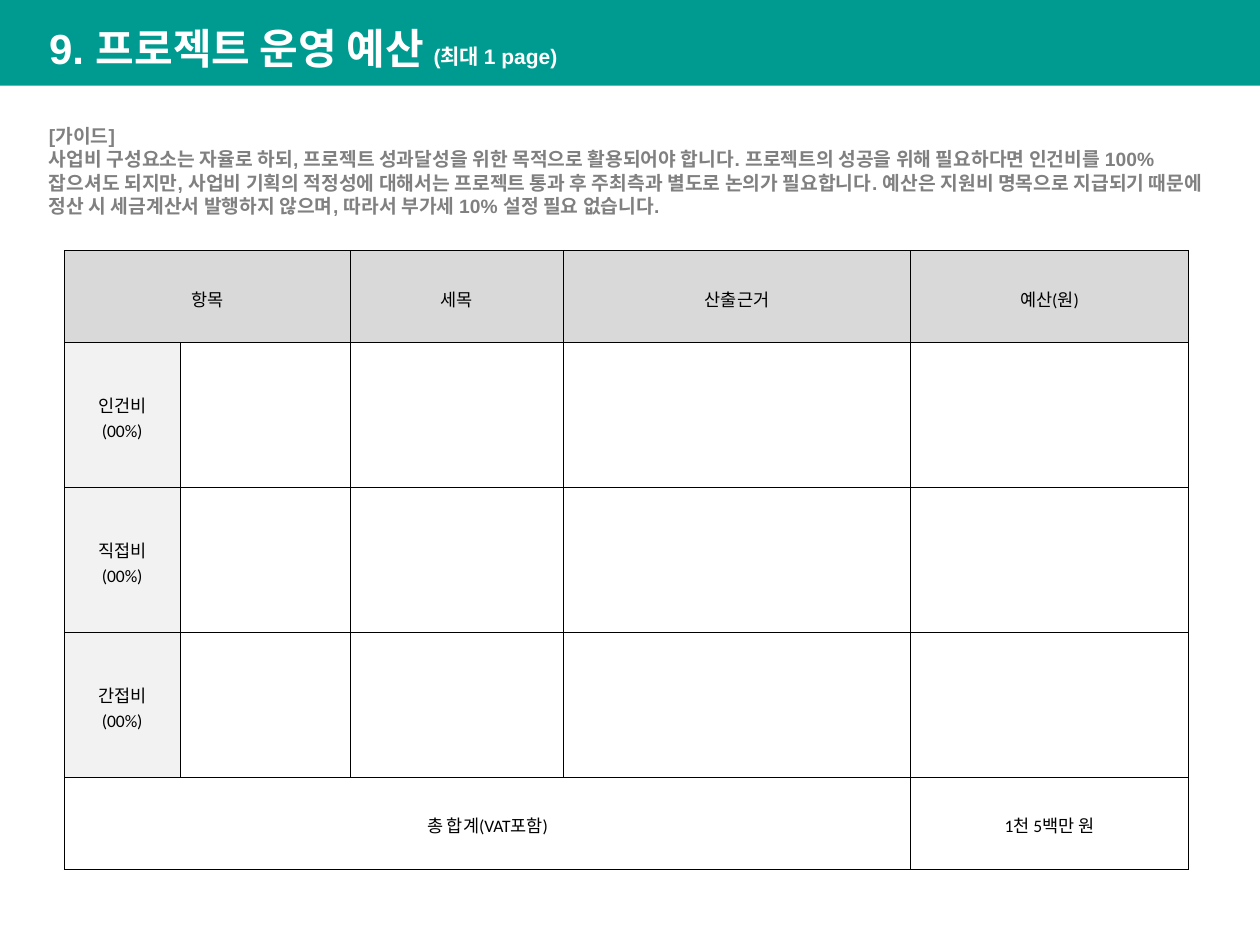
from lxml import etree
from pptx import Presentation
from pptx import util as u
from pptx.dml.color import RGBColor
from pptx.enum import shapes, text
from pptx.oxml.ns import qn

WIDTH, HEIGHT = 10, 7.5
MARGIN = 0.29
COLUMNS = [0.92, 1.35, 1.69, 2.76, 2.2]
ROWS = [0.73, 1.15, 1.15, 1.15, 0.73]
TEAL, GREY, BLACK, WHITE = "009B90", "808080", "000000", "FFFFFF"
HEADER_FILL, LABEL_FILL = "D9D9D9", "F2F2F2"

GUIDE = (
    "[가이드]\n"
    "사업비 구성요소는 자율로 하되, 프로젝트 성과달성을 위한 목적으로 활용되어야 합니다. "
    "프로젝트의 성공을 위해 필요하다면 인건비를 100% 잡으셔도 되지만, "
    "사업비 기획의 적정성에 대해서는 프로젝트 통과 후 주최측과 별도로 논의가 필요합니다. "
    "예산은 지원비 명목으로 지급되기 때문에 정산 시 세금계산서 발행하지 않으며, "
    "따라서 부가세 10% 설정 필요 없습니다."
)
BUDGET = [
    ["항목", "", "세목", "산출근거", "예산(원)"],
    *[[f"{cost}\n(00%)", "", "", "", ""] for cost in ("인건비", "직접비", "간접비")],
    ["총 합계(VAT포함)", "", "", "", "1천 5백만 원"],
]


def color(hex_value):
    return RGBColor.from_string(hex_value)


def paint(shape_or_cell, hex_value):
    shape_or_cell.fill.solid()
    shape_or_cell.fill.fore_color.rgb = color(hex_value)


def format_run(run, size, font, hex_value, bold):
    run.font.size = u.Pt(size)
    run.font.name = font
    run.font.bold = bold
    run.font.color.rgb = color(hex_value)


def add_band(slide):
    band = slide.shapes.add_shape(
        shapes.MSO_SHAPE.RECTANGLE, 0, 0, u.Inches(WIDTH), u.Inches(0.68))
    band.shadow.inherit = False
    paint(band, TEAL)
    band.line.fill.background()
    # Keep the band behind the title
    slide.shapes._spTree.insert(2, band._element)


def set_title(slide, heading, limit):
    title = slide.shapes.title
    title.left, title.top = u.Inches(MARGIN), u.Inches(0.06)
    title.width, title.height = u.Inches(WIDTH - MARGIN), u.Inches(0.57)
    frame = title.text_frame
    frame.vertical_anchor = text.MSO_ANCHOR.MIDDLE
    frame.auto_size = text.MSO_AUTO_SIZE.NONE
    line = frame.paragraphs[0]
    line.alignment = text.PP_ALIGN.LEFT
    line.line_spacing = 1.15
    line.space_before = u.Pt(0)
    for words, size in ((heading, 24), (limit, 12)):
        run = line.add_run()
        run.text = words
        format_run(run, size, "Arial", WHITE, True)


def add_guide(slide):
    guide = slide.shapes.add_textbox(
        u.Inches(MARGIN), u.Inches(0.94), u.Inches(9.44), u.Inches(1.03))
    guide.text_frame.word_wrap = True
    guide.text_frame.text = GUIDE
    for paragraph in guide.text_frame.paragraphs:
        for run in paragraph.runs:
            format_run(run, 11, "Arial", GREY, True)


def add_borders(cell):
    properties = cell._tc.get_or_add_tcPr()
    for side in ("a:lnL", "a:lnR", "a:lnT", "a:lnB"):
        border = etree.SubElement(properties, qn(side), w=str(u.Pt(0.5)))
        fill = etree.SubElement(border, qn("a:solidFill"))
        etree.SubElement(fill, qn("a:srgbClr"), val=BLACK)


def cell_fill(row, column):
    if row == 0:
        return HEADER_FILL
    return LABEL_FILL if column == 0 and row < len(ROWS) - 1 else WHITE


def format_cell(cell, words, fill):
    add_borders(cell)
    paint(cell, fill)
    cell.vertical_anchor = text.MSO_ANCHOR.MIDDLE
    cell.margin_left = cell.margin_right = u.Inches(0.07)
    cell.margin_top = cell.margin_bottom = u.Inches(0.07)
    if not words:
        return
    cell.text_frame.text = words
    for paragraph in cell.text_frame.paragraphs:
        paragraph.alignment = text.PP_ALIGN.CENTER
        paragraph.line_spacing = 1.15
        for run in paragraph.runs:
            format_run(run, 10, "Calibri", BLACK, False)


def add_budget(slide):
    budget = slide.shapes.add_table(
        len(ROWS), len(COLUMNS), u.Inches(0.51), u.Inches(1.99),
        u.Inches(sum(COLUMNS)), u.Inches(sum(ROWS))).table
    for column, width in zip(budget.columns, COLUMNS):
        column.width = u.Inches(width)
    for row, height in zip(budget.rows, ROWS):
        row.height = u.Inches(height)
    for r, entries in enumerate(BUDGET):
        for c, words in enumerate(entries):
            format_cell(budget.cell(r, c), words, cell_fill(r, c))
    # Item heading covers two columns, the total label four
    budget.cell(0, 0).merge(budget.cell(0, 1))
    budget.cell(4, 0).merge(budget.cell(4, 3))


def main():
    deck = Presentation()
    deck.slide_width, deck.slide_height = u.Inches(WIDTH), u.Inches(HEIGHT)
    slide = deck.slides.add_slide(deck.slide_layouts[5])
    add_band(slide)
    set_title(slide, "9. 프로젝트 운영 예산 ", "(최대 1 page)")
    add_guide(slide)
    add_budget(slide)
    deck.save("out.pptx")


if __name__ == "__main__":
    main()
